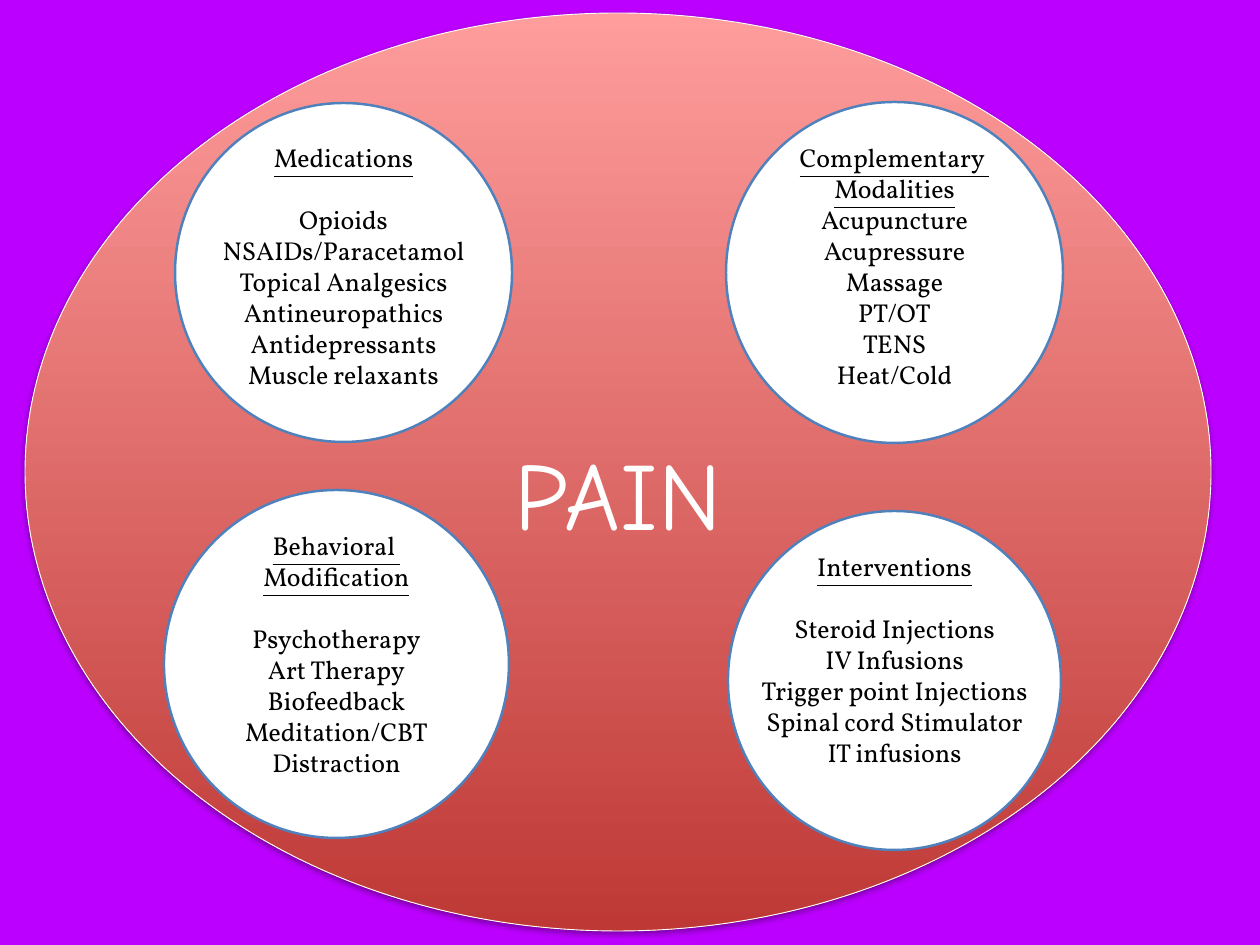
from lxml import etree
from pptx import Presentation
from pptx.dml.color import RGBColor
from pptx.enum.shapes import MSO_SHAPE
from pptx.enum.text import MSO_ANCHOR, PP_ALIGN
from pptx.oxml.ns import qn
from pptx.util import Emu, Pt

OVAL = MSO_SHAPE.OVAL
MIDDLE = MSO_ANCHOR.MIDDLE
CENTER = PP_ALIGN.CENTER

PURPLE = RGBColor(0xBC, 0x00, 0xFF)
SALMON = RGBColor(0xFE, 0x9D, 0x9C)
BRICK = RGBColor(0xBE, 0x39, 0x36)
BLUE = RGBColor(0x4F, 0x81, 0xBD)
WHITE = RGBColor(0xFF, 0xFF, 0xFF)
BLACK = RGBColor(0x00, 0x00, 0x00)

TREATMENTS = [
    ((164, 490, 345, 348), 21, 25, ["Behavioral ", "Modification"],
     ["Psychotherapy", "Art Therapy", "Biofeedback", "Meditation/CBT",
      "Distraction"]),
    ((728, 511, 333, 339), 43, 25, ["Interventions"],
     ["Steroid Injections", "IV Infusions", "Trigger point Injections",
      "Spinal cord Stimulator", "IT infusions"]),
    ((175, 103, 337, 339), 13, 25, ["Medications"],
     ["Opioids", "NSAIDs/Paracetamol", "Topical Analgesics",
      "Antineuropathics", "Antidepressants", "Muscle relaxants"]),
    ((726, 102, 337, 341), 14, 0, ["Complementary ", "Modalities"],
     ["Acupuncture", "Acupressure", "Massage", "PT/OT", "TENS",
      "Heat/Cold"]),
]


def px(length):
    return Emu(length * 10320)


def add_oval(slide, bounds, line_color, line_width, top=0, bottom=0):
    oval = slide.shapes.add_shape(OVAL, *map(px, bounds))
    oval.shadow.inherit = False
    oval.line.color.rgb = line_color
    oval.line.width = Pt(line_width)
    frame = oval.text_frame
    frame.word_wrap = False
    frame.vertical_anchor = MIDDLE
    frame.margin_left = frame.margin_right = 0
    frame.margin_top, frame.margin_bottom = px(top), px(bottom)
    return oval


def add_line(paragraph, text, font_name, size, color, underline=False):
    paragraph.alignment = CENTER
    run = paragraph.add_run()
    run.text = text
    run.font.name = font_name
    run.font.size = Pt(size)
    run.font.color.rgb = color
    run.font.underline = underline


def add_soft_shadow(shape):
    effects = shape._element.spPr.find(qn("a:effectLst"))
    shadow = etree.SubElement(
        effects, qn("a:outerShdw"), blurRad=str(Pt(3)), dist=str(Pt(1.8)),
        dir="5400000", rotWithShape="0")
    black = etree.SubElement(shadow, qn("a:srgbClr"), val=str(BLACK))
    etree.SubElement(black, qn("a:alpha"), val="35000")


def add_pain(slide):
    pain = add_oval(slide, (25, 13, 1186, 918), WHITE, 0.75, top=40)
    pain.fill.gradient()
    pain.fill.gradient_angle = 270
    for stop, color, position in zip(
            pain.fill.gradient_stops, (SALMON, BRICK), (0, 1)):
        stop.color.rgb = color
        stop.position = position
    add_soft_shadow(pain)
    add_line(pain.text_frame.paragraphs[0], "PAIN", "Comic Neue", 78, WHITE)


def add_treatment(slide, bounds, bottom, gap, heading, therapies):
    circle = add_oval(slide, bounds, BLUE, 2, bottom=bottom)
    circle.fill.solid()
    circle.fill.fore_color.rgb = WHITE
    frame = circle.text_frame
    for index, text in enumerate(heading + therapies):
        paragraph = frame.add_paragraph() if index else frame.paragraphs[0]
        if index == len(heading):
            paragraph.space_before = Pt(gap)
        add_line(paragraph, text, "Vollkorn", 21, BLACK,
                 underline=index < len(heading))


def main():
    deck = Presentation()
    deck.slide_width, deck.slide_height = px(1260), px(945)
    slide = deck.slides.add_slide(deck.slide_layouts[6])
    slide.background.fill.solid()
    slide.background.fill.fore_color.rgb = PURPLE
    add_pain(slide)
    for treatment in TREATMENTS:
        add_treatment(slide, *treatment)
    deck.save("out.pptx")


if __name__ == "__main__":
    main()
